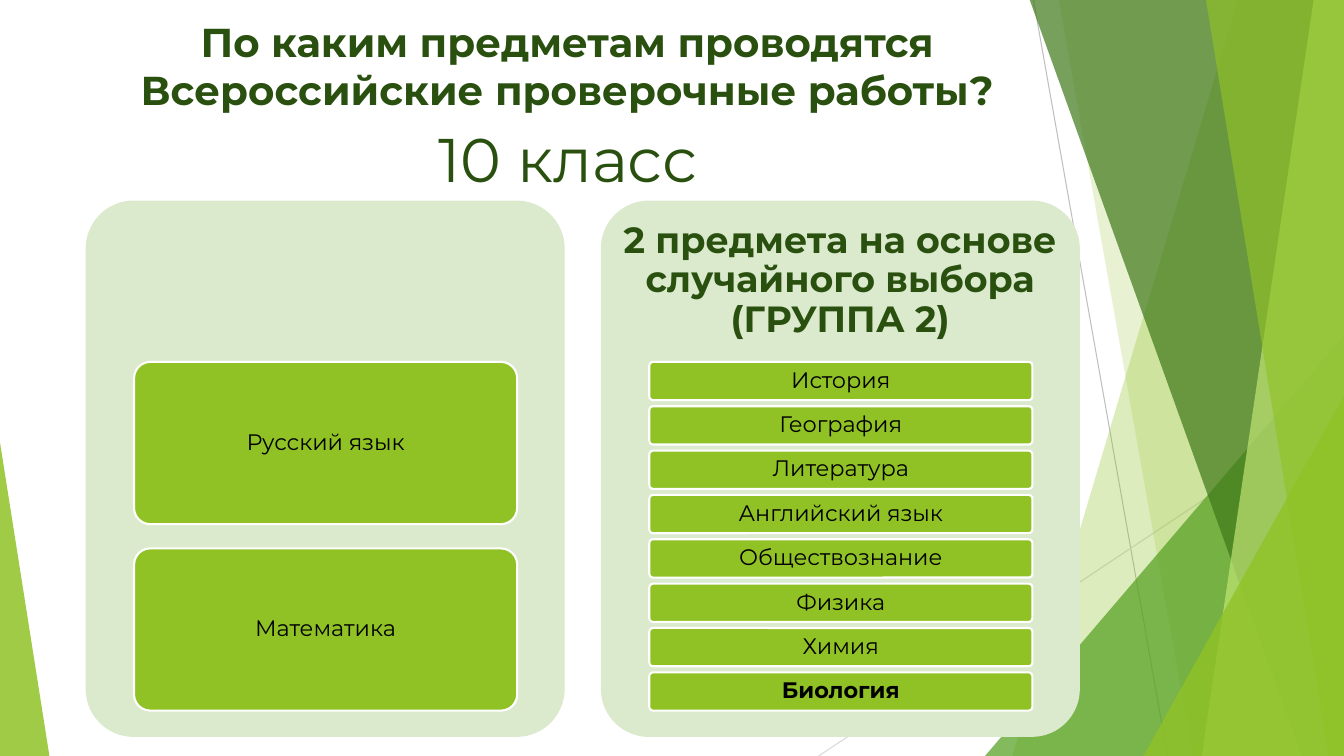
from lxml import etree
from pptx import Presentation
from pptx import util as u
from pptx.dml.color import RGBColor
from pptx.enum import shapes, text
from pptx.oxml.ns import qn

WHITE = RGBColor(0xFF, 0xFF, 0xFF)
BLACK = RGBColor(0x00, 0x00, 0x00)
LIME = RGBColor(0x90, 0xC2, 0x26)
PALE_LIME = RGBColor(0xC0, 0xE4, 0x74)
GREEN = RGBColor(0x54, 0xA0, 0x21)
FOREST = RGBColor(0x3F, 0x78, 0x19)
DARK_GREEN = RGBColor(0x2A, 0x50, 0x10)
PANEL = RGBColor(0xDB, 0xE9, 0xCD)
GREY = RGBColor(0xBF, 0xBF, 0xBF)
LIGHT_GREY = RGBColor(0xD9, 0xD9, 0xD9)


class SlideBuilder:
    """Draws styled elements on one slide."""

    font = "Montserrat"

    def __init__(self, slide):
        self.shapes = slide.shapes

    def paint(self, shape, color, opacity=100):
        shape.shadow.inherit = False
        shape.fill.solid()
        shape.fill.fore_color.rgb = color
        shape.line.fill.background()
        if opacity < 100:
            srgb = shape._element.spPr.find(qn("a:solidFill"))[0]
            etree.SubElement(srgb, qn("a:alpha")).set("val", str(opacity * 1000))

    def ray(self, start, end, color):
        line = self.shapes.add_connector(
            shapes.MSO_CONNECTOR.STRAIGHT, *map(u.Inches, start + end))
        line.line.color.rgb = color
        line.line.width = u.Pt(0.75)
        etree.SubElement(line._element.spPr, qn("a:effectLst"))

    def shard(self, top_left, bottom_left, color, opacity):
        outline = [(top_left, -0.01), (13.33, -0.01), (13.33, 7.5), (bottom_left, 7.5)]
        points = [(u.Inches(x), u.Inches(y)) for x, y in outline]
        builder = self.shapes.build_freeform(*points[0])
        builder.add_line_segments(points[1:], close=True)
        self.paint(builder.convert_to_shape(), color, opacity)

    def triangle(self, box, apex, color, opacity):
        corner = self.shapes.add_shape(
            shapes.MSO_SHAPE.ISOSCELES_TRIANGLE, *map(u.Inches, box))
        corner.adjustments[0] = apex
        self.paint(corner, color, opacity)

    def rounded(self, box, color):
        block = self.shapes.add_shape(
            shapes.MSO_SHAPE.ROUNDED_RECTANGLE, *map(u.Inches, box))
        block.adjustments[0] = 0.1
        self.paint(block, color)
        return block

    def set_words(self, frame, words, size, color, bold=False, spacing=None):
        frame.word_wrap = True
        line = frame.paragraphs[0]
        line.text = words
        line.alignment = text.PP_ALIGN.CENTER
        line.line_spacing = spacing
        line.font.name = self.font
        line.font.size = u.Pt(size)
        line.font.bold = bold
        line.font.color.rgb = color

    def label(self, box, words, size, bold=False, spacing=None,
              anchor=text.MSO_ANCHOR.TOP):
        frame = self.shapes.add_textbox(*map(u.Inches, box)).text_frame
        frame.vertical_anchor = anchor
        self.set_words(frame, words, size, DARK_GREEN, bold, spacing)

    def subject(self, box, words, bold=False):
        card = self.rounded(box, LIME)
        card.line.color.rgb = WHITE
        card.line.width = u.Pt(1.5)
        frame = card.text_frame
        frame.vertical_anchor = text.MSO_ANCHOR.MIDDLE
        frame.margin_left = frame.margin_right = u.Inches(0.04)
        frame.margin_top = frame.margin_bottom = u.Inches(0.03)
        self.set_words(frame, words, 16, BLACK, bold, 0.9)

    def subjects(self, left, height, pitch, names, bold_name=None):
        for row, name in enumerate(names):
            box = (left, 3.59 + row * pitch, 3.8, height)
            self.subject(box, name, name == bold_name)


def main():
    deck = Presentation()
    deck.slide_width = u.Inches(13.33)
    deck.slide_height = u.Inches(7.5)
    page = SlideBuilder(deck.slides.add_slide(deck.slide_layouts[6]))

    page.ray((10.25, 0), (11.58, 7.5), GREY)
    page.ray((13.33, 4.03), (8.12, 7.5), LIGHT_GREY)
    page.shard(12.28, 10.04, LIME, 30)
    page.shard(10.5, 11.83, LIME, 20)
    page.triangle((9.77, 3.33, 3.56, 4.17), 1, GREEN, 72)
    page.shard(10.21, 12.91, FOREST, 70)
    page.shard(13.03, 11.92, PALE_LIME, 70)
    page.shard(11.96, 13.18, LIME, 65)
    page.triangle((11.34, 3.93, 1.99, 3.57), 1, LIME, 80)
    page.triangle((0, 4.39, 0.49, 3.11), 0, LIME, 85)

    page.label((0.53, 0.12, 10.19, 1.02),
               "По каким предметам проводятся Всероссийские проверочные работы?",
               28.8, bold=True)
    for left in (0.85, 5.96):
        page.rounded((left, 1.99, 4.75, 5.32), PANEL)
    page.subjects(1.33, 1.61, 1.85, ["Русский язык", "Математика"])
    page.label((5.96, 1.99, 4.75, 1.6),
               "2 предмета на основе случайного выбора (ГРУППА 2)",
               26, bold=True, spacing=0.9, anchor=text.MSO_ANCHOR.MIDDLE)
    page.subjects(6.44, 0.38, 0.44,
                  ["История", "География", "Литература", "Английский язык",
                   "Обществознание", "Физика", "Химия", "Биология"],
                  bold_name="Биология")
    page.label((3.35, 1.15, 4.56, 0.84), "10 класс", 44)

    deck.save("out.pptx")


if __name__ == "__main__":
    main()
